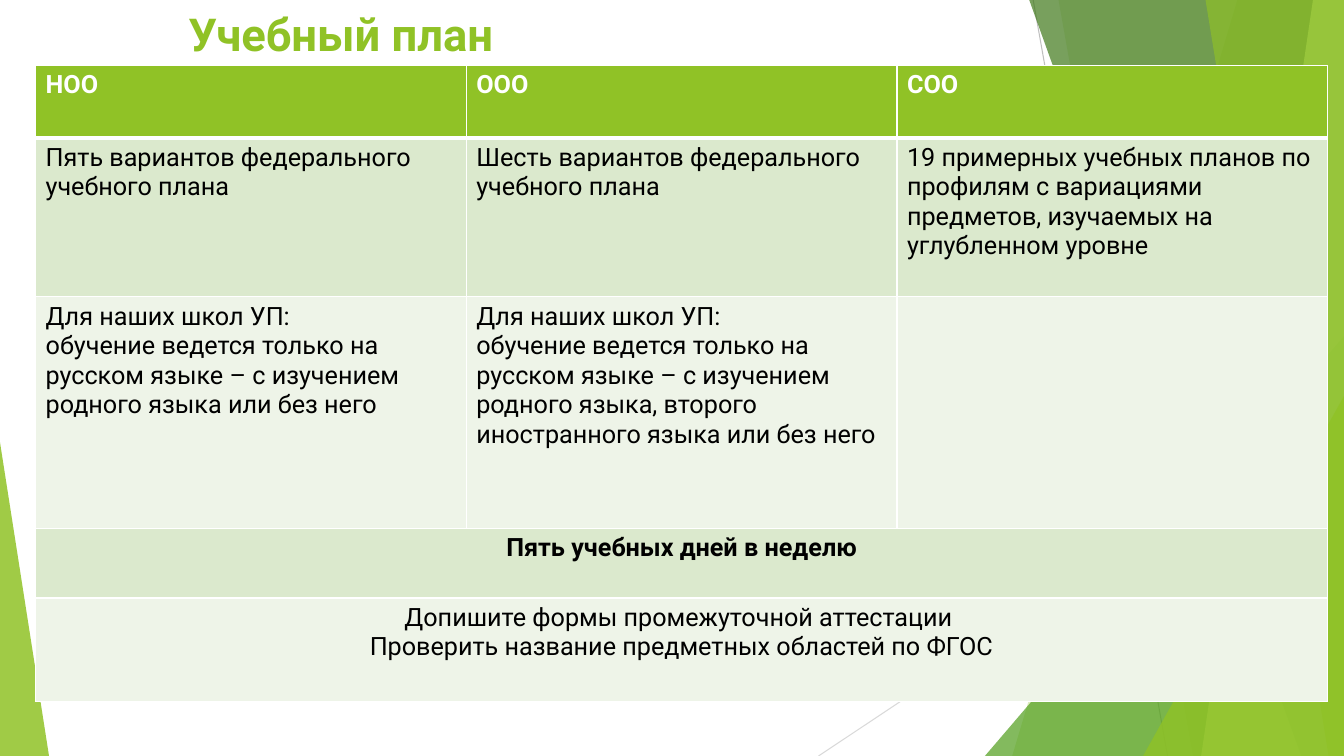
from dataclasses import dataclass

from lxml.etree import SubElement
from pptx import Presentation
from pptx.dml.color import RGBColor
from pptx.enum.shapes import MSO_CONNECTOR, MSO_SHAPE
from pptx.enum.text import MSO_ANCHOR, PP_ALIGN
from pptx.oxml import parse_xml
from pptx.oxml.ns import nsdecls, qn
from pptx.util import Pt

WIDTH, HEIGHT = 960, 540
FONT = "Roboto"
WHITE = RGBColor(0xFF, 0xFF, 0xFF)
BLACK = RGBColor(0x00, 0x00, 0x00)
LIME = RGBColor(0x90, 0xC2, 0x26)
GREEN = RGBColor(0x54, 0xA0, 0x21)
DARK_GREEN = RGBColor(0x3F, 0x78, 0x19)
PALE_LIME = RGBColor(0xC0, 0xE4, 0x74)
BAND_DARK = RGBColor(0xDB, 0xE9, 0xCD)
BAND_LIGHT = RGBColor(0xEE, 0xF4, 0xE8)
GRAY = RGBColor(0xBF, 0xBF, 0xBF)
LIGHT_GRAY = RGBColor(0xD9, 0xD9, 0xD9)


@dataclass
class Ray:
    start: tuple[float, float]
    end: tuple[float, float]
    color: RGBColor


@dataclass
class Panel:
    """Band reaching the right slide edge, with a slanted left side."""
    top_left: float
    bottom_left: float
    color: RGBColor
    opacity: int


@dataclass
class Triangle:
    """Right triangle on the bottom edge; apex is 0 (left) or 1 (right)."""
    left: float
    top: float
    width: float
    apex: int
    color: RGBColor
    opacity: int


@dataclass
class Row:
    height: float
    fill: RGBColor
    cells: list[list[str]]
    color: RGBColor = BLACK
    bold: bool = False
    bottom_border: float = 1


RAYS = [
    Ray((738, 0), (834, HEIGHT), GRAY),
    Ray((WIDTH, 290), (584.7, HEIGHT), LIGHT_GRAY),
]
DECORATIONS = [
    Panel(884, 723, LIME, 30),
    Panel(756, 852, LIME, 20),
    Triangle(703.5, 240, 256.5, 1, GREEN, 72),
    Panel(735, 929.5, DARK_GREEN, 70),
    Panel(938, 858, PALE_LIME, 70),
    Panel(861, 949, LIME, 65),
    Triangle(816.5, 283, 143.5, 1, LIME, 80),
    Triangle(0, 316, 35, 0, LIME, 85),
]

COLUMNS = 3
TABLE_LEFT, TABLE_TOP, TABLE_WIDTH = 25.4, 46.8, 923
OUR_SCHOOLS = "Для наших школ УП:"
ROWS = [
    Row(51.6, LIME, [["НОО"], ["ООО"], ["СОО"]], WHITE, True, 3),
    Row(113.6, BAND_DARK, [
        ["Пять вариантов федерального учебного плана"],
        ["Шесть вариантов федерального учебного плана"],
        ["19 примерных учебных планов по профилям с вариациями предметов, "
         "изучаемых на углубленном уровне"],
    ]),
    Row(165.6, BAND_LIGHT, [
        [OUR_SCHOOLS, "обучение ведется только на русском языке – с изучением "
                      "родного языка или без него"],
        [OUR_SCHOOLS, "обучение ведется только на русском языке – с изучением "
                      "родного языка, второго иностранного языка или без него"],
        [],
    ]),
    Row(49.6, BAND_DARK, [["Пять учебных дней в неделю"]], bold=True),
    Row(74, BAND_LIGHT, [[
        "Допишите формы промежуточной аттестации ",
        "Проверить название предметных областей по ФГОС",
    ]]),
]


def add_run(paragraph, text: str, size: float, color: RGBColor, bold: bool) -> None:
    run = paragraph.add_run()
    run.text = text
    run.font.name = FONT
    run.font.size = Pt(size)
    run.font.bold = bold
    run.font.color.rgb = color


def add_ray(slide, ray: Ray) -> None:
    connector = slide.shapes.add_connector(
        MSO_CONNECTOR.STRAIGHT, *map(Pt, ray.start + ray.end))
    connector.line.color.rgb = ray.color
    connector.line.width = Pt(0.75)
    SubElement(connector.element.spPr, qn("a:effectLst"))


def add_decoration(slide, item: Panel | Triangle) -> None:
    if isinstance(item, Panel):
        builder = slide.shapes.build_freeform(Pt(item.top_left), Pt(-0.6))
        corners = [(WIDTH, -0.6), (WIDTH, HEIGHT), (item.bottom_left, HEIGHT)]
        builder.add_line_segments([(Pt(x), Pt(y)) for x, y in corners], close=True)
        shape = builder.convert_to_shape()
    else:
        shape = slide.shapes.add_shape(
            MSO_SHAPE.ISOSCELES_TRIANGLE, Pt(item.left), Pt(item.top),
            Pt(item.width), Pt(HEIGHT - item.top))
        shape.adjustments[0] = item.apex
    shape.shadow.inherit = False
    shape.line.fill.background()
    shape.fill.solid()
    shape.fill.fore_color.rgb = item.color
    color_element = shape.element.spPr.find(qn("a:solidFill"))[0]
    SubElement(color_element, qn("a:alpha"), val=str(item.opacity * 1000))


def add_title(slide) -> None:
    box = slide.shapes.add_textbox(Pt(127.4), Pt(0), Pt(821), Pt(46.8))
    frame = box.text_frame
    frame.word_wrap = True
    frame.vertical_anchor = MSO_ANCHOR.BOTTOM
    add_run(frame.paragraphs[0], "Учебный план", 32.4, LIME, True)


def set_borders(cell, top: float, bottom: float) -> None:
    properties = cell._tc.get_or_add_tcPr()
    widths = {"lnL": 1, "lnR": 1, "lnT": top, "lnB": bottom}
    for index, (side, width) in enumerate(widths.items()):
        properties.insert(index, parse_xml(
            f'<a:{side} {nsdecls("a")} w="{Pt(width)}"><a:solidFill>'
            f'<a:srgbClr val="{WHITE}"/></a:solidFill></a:{side}>'))


def fill_cell(cell, lines: list[str], row: Row, centered: bool) -> None:
    frame = cell.text_frame
    for index, line in enumerate(lines):
        paragraph = frame.add_paragraph() if index else frame.paragraphs[0]
        if centered:
            paragraph.alignment = PP_ALIGN.CENTER
        add_run(paragraph, line, 18, row.color, row.bold)


def add_plan_table(slide) -> None:
    table = slide.shapes.add_table(
        len(ROWS), COLUMNS, Pt(TABLE_LEFT), Pt(TABLE_TOP),
        Pt(TABLE_WIDTH), Pt(sum(row.height for row in ROWS))).table
    table.horz_banding = False
    table.first_row = False
    for column in table.columns:
        column.width = Pt(TABLE_WIDTH / COLUMNS)
    top_border = 1
    for row_index, row in enumerate(ROWS):
        table.rows[row_index].height = Pt(row.height)
        for cell in table.rows[row_index].cells:
            cell.fill.solid()
            cell.fill.fore_color.rgb = row.fill
            set_borders(cell, top_border, row.bottom_border)
        top_border = row.bottom_border
        merged = len(row.cells) == 1
        if merged:
            table.cell(row_index, 0).merge(table.cell(row_index, COLUMNS - 1))
        for column_index, lines in enumerate(row.cells):
            fill_cell(table.cell(row_index, column_index), lines, row, merged)


def main() -> None:
    presentation = Presentation()
    presentation.slide_width = Pt(WIDTH)
    presentation.slide_height = Pt(HEIGHT)
    slide = presentation.slides.add_slide(presentation.slide_layouts[6])
    for ray in RAYS:
        add_ray(slide, ray)
    for item in DECORATIONS:
        add_decoration(slide, item)
    add_title(slide)
    add_plan_table(slide)
    presentation.save("out.pptx")


if __name__ == "__main__":
    main()
